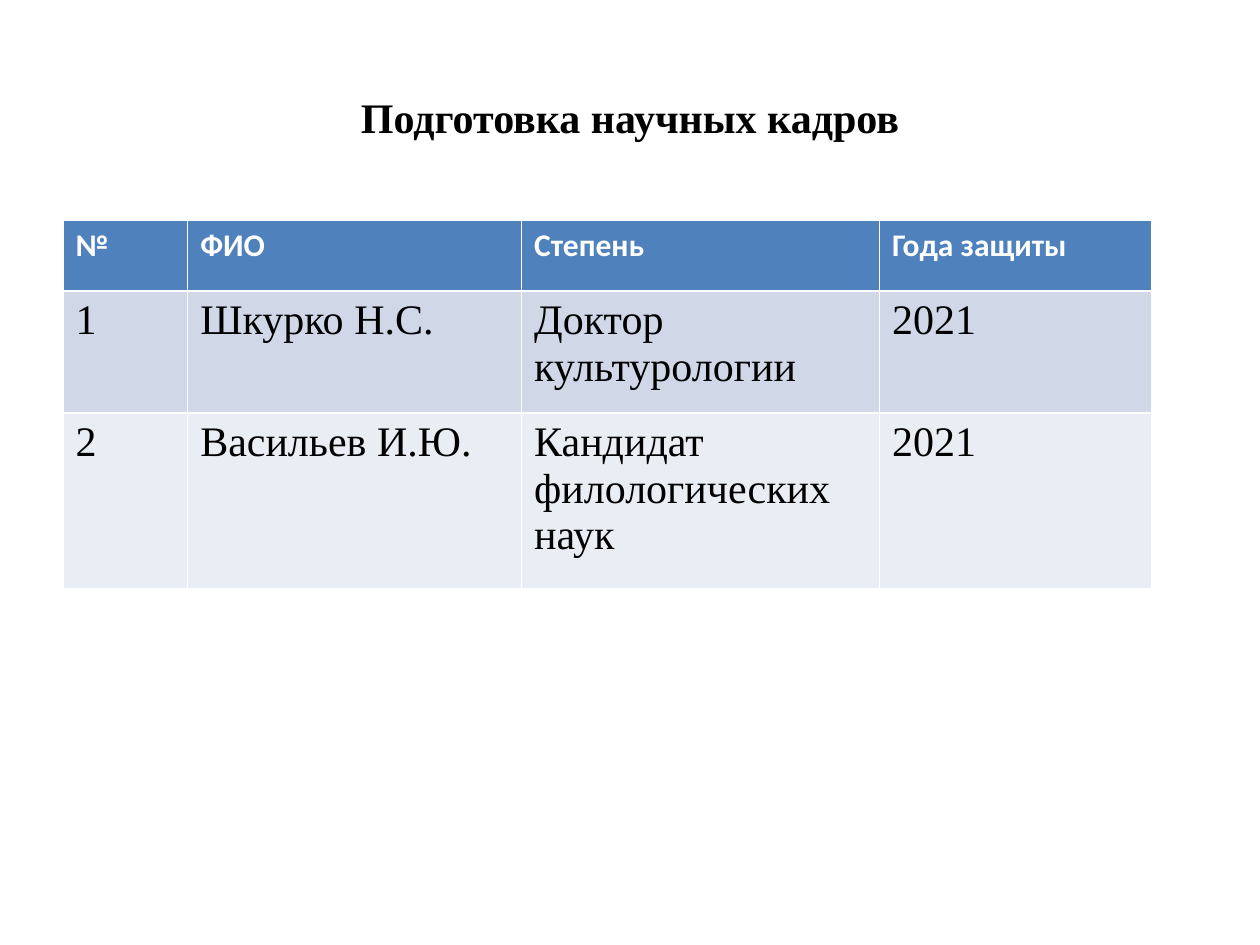
from pptx import Presentation
from pptx import util as u
from pptx.dml.color import RGBColor
from pptx.enum import text

HEADING = {"name": "Times New Roman", "size": u.Pt(24), "bold": True, "color": "000000"}
HEADER = {"name": "Calibri", "size": u.Pt(18), "bold": True, "color": "FFFFFF"}
BODY = {"name": "Times New Roman", "size": u.Pt(24), "bold": False, "color": "000000"}

HEADER_FILL = "4F81BD"
BAND_FILLS = ["D0D8E8", "E9EDF4"]

COLUMN_WIDTHS = [0.99, 2.65, 2.84, 2.16]
ROW_HEIGHTS = [0.56, 0.97, 1.39]
STAFF = [
    ["№", "ФИО", "Степень", "Года защиты"],
    ["1", "Шкурко Н.С.", "Доктор культурологии", "2021"],
    ["2", "Васильев И.Ю.", "Кандидат филологических наук", "2021"],
]


def paint(color_format, value):
    color_format.rgb = RGBColor.from_string(value)


class SlideBuilder:
    def __init__(self, page):
        self.page = page

    def add_span(self, para, words, style):
        span = para.add_run()
        span.text = words
        for key, value in style.items():
            if key == "color":
                paint(span.font.color, value)
            else:
                setattr(span.font, key, value)

    def heading(self, words, left, top, width, height):
        box = self.page.shapes.add_textbox(*map(u.Inches, (left, top, width, height)))
        frame = box.text_frame
        frame.word_wrap = True
        frame.vertical_anchor = text.MSO_ANCHOR.MIDDLE
        para = frame.paragraphs[0]
        para.alignment = text.PP_ALIGN.CENTER
        self.add_span(para, words, HEADING)

    def table(self, rows, left, top, widths, heights):
        area = map(u.Inches, (left, top, sum(widths), sum(heights)))
        grid = self.page.shapes.add_table(len(rows), len(widths), *area).table
        for column, width in zip(grid.columns, widths):
            column.width = u.Inches(width)
        for index, (row, height) in enumerate(zip(grid.rows, heights)):
            row.height = u.Inches(height)
            style = BODY if index else HEADER
            fill = BAND_FILLS[(index - 1) % 2] if index else HEADER_FILL
            for cell, words in zip(row.cells, rows[index]):
                cell.fill.solid()
                paint(cell.fill.fore_color, fill)
                self.add_span(cell.text_frame.paragraphs[0], words, style)


def main():
    deck = Presentation()
    deck.slide_width = u.Inches(10)
    deck.slide_height = u.Inches(7.5)
    builder = SlideBuilder(deck.slides.add_slide(deck.slide_layouts[6]))
    builder.heading("Подготовка научных кадров", 0.5, 0.3, 9, 1.25)
    builder.table(STAFF, 0.5, 1.75, COLUMN_WIDTHS, ROW_HEIGHTS)
    deck.save("out.pptx")


if __name__ == "__main__":
    main()
